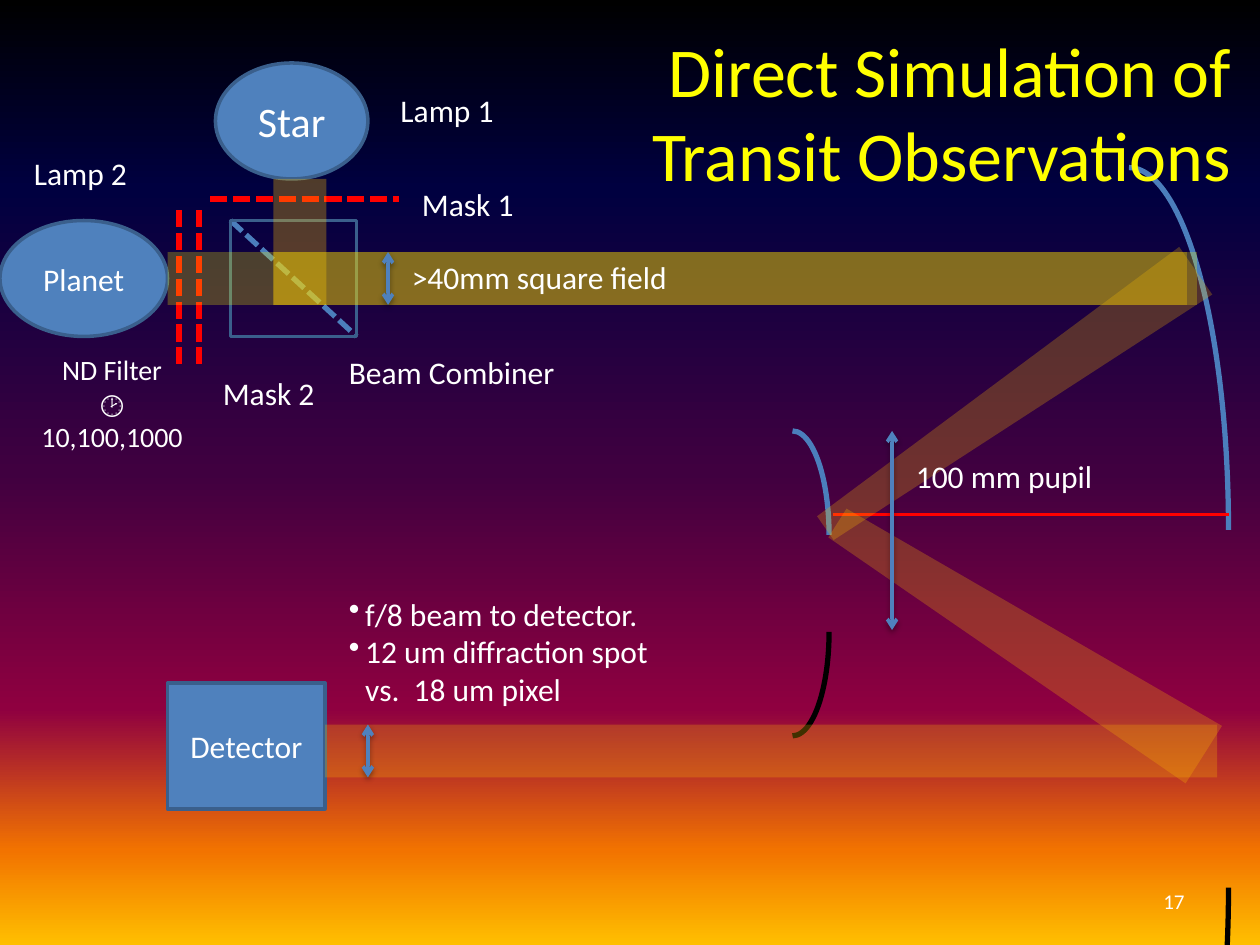
from lxml.etree import SubElement
from pptx import Presentation
from pptx.dml.color import RGBColor
from pptx.enum.dml import MSO_LINE_DASH_STYLE as Dash
from pptx.enum.shapes import MSO_CONNECTOR as Connector, MSO_SHAPE as Shape
from pptx.enum.text import MSO_ANCHOR as Anchor, MSO_AUTO_SIZE as AutoSize, PP_ALIGN as Align
from pptx.oxml.ns import qn
from pptx.util import Inches, Pt

FONT = "Calibri"
WHITE, BLACK, RED, YELLOW = "FFFFFF", "000000", "FF0000", "FFFF00"
BLUE, EDGE, MIRROR, GOLD = "4F81BD", "3A5F8C", "4B7EBC", "FFC000"
SKY = [(0, "000000"), (20, "000040"), (50, "400040"),
       (75, "8F0040"), (90, "F27300"), (100, "FFBF00")]
# Start and end of an arc, clockwise from the right, in degrees * 0.6
UPPER_QUARTER, LOWER_QUARTER = (162, 0), (0, 54)


def rgb(color):
    return RGBColor.from_string(color)


def inches(*lengths):
    return [Inches(length) for length in lengths]


def set_background(slide):
    fill = slide.background.fill
    fill.gradient()
    fill.gradient_angle = 270
    stops = slide.element.find(".//" + qn("a:gsLst"))
    for stop in list(stops):
        stops.remove(stop)
    for percent, color in SKY:
        stop = SubElement(stops, qn("a:gs"), pos=str(percent * 1000))
        SubElement(stop, qn("a:srgbClr"), val=color)


def style_text(frame, text, size, color=WHITE, align=Align.LEFT):
    frame.text = text
    for paragraph in frame.paragraphs:
        paragraph.alignment = align
        font = paragraph.font
        font.name, font.size, font.color.rgb = FONT, Pt(size), rgb(color)


def add_shape(slide, kind, box, fill=None, line=None, width=2):
    shape = slide.shapes.add_shape(kind, *inches(*box))
    shape.shadow.inherit = False
    if fill:
        shape.fill.solid()
        shape.fill.fore_color.rgb = rgb(fill)
    else:
        shape.fill.background()
    if line:
        shape.line.color.rgb = rgb(line)
        shape.line.width = Pt(width)
    else:
        shape.line.fill.background()
    return shape


def add_component(slide, kind, box, text, size=18):
    shape = add_shape(slide, kind, box, BLUE, EDGE)
    style_text(shape.text_frame, text, size, align=Align.CENTER)
    shape.text_frame.vertical_anchor = Anchor.MIDDLE


def add_mirror(slide, box, quarter, color):
    """Draw one quarter of an ellipse as a curved mirror."""
    arc = add_shape(slide, Shape.ARC, box, line=color, width=3)
    arc.adjustments[0], arc.adjustments[1] = quarter


def add_beam(slide, kind, box, color, opacity, rotation=0):
    beam = add_shape(slide, kind, box, color)
    beam.rotation = rotation
    fill_color = beam.element.spPr.find(qn("a:solidFill"))[0]
    SubElement(fill_color, qn("a:alpha"), val=str(opacity * 1000))


def add_line(slide, start, end, color, width, dash=None):
    line = slide.shapes.add_connector(Connector.STRAIGHT, *inches(*start, *end))
    line.line.color.rgb = rgb(color)
    line.line.width = Pt(width)
    if dash:
        line.line.dash_style = dash
    SubElement(line.element.spPr, qn("a:effectLst"))


def add_size_arrow(slide, x, top, bottom):
    """Draw a vertical double arrow that keeps the theme's shadow."""
    arrow = slide.shapes.add_connector(Connector.STRAIGHT, *inches(x, top, x, bottom))
    arrow.line.color.rgb = rgb(BLUE)
    arrow.line.width = Pt(2)
    outline = arrow.element.spPr.find(qn("a:ln"))
    for end in ("a:headEnd", "a:tailEnd"):
        SubElement(outline, qn(end), type="arrow")


def add_text(slide, box, text, size=18, align=Align.LEFT, wrap=True):
    text_box = slide.shapes.add_textbox(*inches(*box))
    frame = text_box.text_frame
    frame.word_wrap = wrap
    style_text(frame, text, size, align=align)
    return frame


def add_bullets(slide, box, items):
    for paragraph in add_text(slide, box, "\n".join(items)).paragraphs:
        properties = paragraph._p.get_or_add_pPr()
        properties.set("marL", str(Inches(0.13)))
        properties.set("indent", str(Inches(-0.13)))
        bullet = properties.makeelement(qn("a:buChar"), {"char": "•"})
        properties.insert_element_before(bullet, "a:tabLst", "a:defRPr", "a:extLst")


def place_title(slide, box, text):
    """Format the title and bring it in front of the shapes drawn so far."""
    title = slide.shapes.title
    title.left, title.top, title.width, title.height = inches(*box)
    frame = title.text_frame
    style_text(frame, text, 40, YELLOW, Align.RIGHT)
    frame.word_wrap = True
    frame.auto_size = AutoSize.NONE
    frame.vertical_anchor = Anchor.TOP
    title.element.getparent().append(title.element)


def add_optics(slide):
    add_component(slide, Shape.OVAL, (1.71, 0.5, 1.21, 0.92), "Star", 24)
    add_component(slide, Shape.OVAL, (0, 1.75, 1.33, 0.92), "Planet")
    add_mirror(slide, (8.17, 1.33, 1.58, 5.75), UPPER_QUARTER, MIRROR)
    add_mirror(slide, (8.17, 4.17, 1.58, 5.75), LOWER_QUARTER, BLACK)
    add_mirror(slide, (6, 3.42, 0.58, 1.65), UPPER_QUARTER, MIRROR)
    add_mirror(slide, (6, 4.19, 0.58, 1.65), LOWER_QUARTER, BLACK)
    add_line(slide, (9.75, 4.08), (6.61, 4.08), RED, 1.75)
    add_component(slide, Shape.RECTANGLE, (1.33, 5.42, 1.25, 1), "Detector")
    add_line(slide, (1.67, 1.58), (3.17, 1.58), RED, 3.25, Dash.SQUARE_DOT)
    for x in (1.42, 1.58):
        add_line(slide, (x, 1.67), (x, 2.92), RED, 3.25, Dash.SQUARE_DOT)
    add_line(slide, (1.83, 1.75), (2.83, 2.67), MIRROR, 3, Dash.SQUARE_DOT)
    add_shape(slide, Shape.RECTANGLE, (1.83, 1.75, 1, 0.92), line=EDGE)


def add_beams(slide):
    add_beam(slide, Shape.RECTANGLE, (2.17, 1.42, 0.42, 1), GOLD, 31)
    add_beam(slide, Shape.RECTANGLE, (2.17, 2, 7.25, 0.42), GOLD, 31)
    add_beam(slide, Shape.RECTANGLE, (1.33, 2, 8.17, 0.42), YELLOW, 25)
    add_beam(slide, Shape.TRAPEZOID, (7.79, 1.38, 0.46, 3.58), GOLD, 25, 235.2)
    add_beam(slide, Shape.TRAPEZOID, (7.83, 3.35, 0.54, 3.44), GOLD, 25, 302.3)
    add_beam(slide, Shape.RECTANGLE, (2.58, 5.75, 7.08, 0.42), GOLD, 25)


def add_labels(slide):
    labels = [
        ("Mask 1", 3.25, 1.42, 0.94),
        ("Mask 2", 1.67, 2.92, 0.94),
        ("Lamp 1", 3.08, 0.67, 0.95),
        ("Lamp 2", 0.17, 1.17, 0.95),
        ("Beam Combiner", 2.67, 2.75, 2.58),
        ("100 mm pupil", 7.17, 3.58, 1.62),
        (">40mm square field", 3.17, 2, 2.33),
    ]
    for text, left, top, width in labels:
        add_text(slide, (left, top, width, 0.4), text, wrap=False)
    add_text(slide, (0.15, 2.75, 1.48, 0.64), "ND Filter\n🕑10,100,1000", 16, Align.CENTER)
    number = add_text(slide, (7.17, 6.95, 2.33, 0.4), "17", 12, Align.RIGHT)
    number.vertical_anchor = Anchor.MIDDLE
    add_bullets(slide, (2.67, 4.67, 2.92, 1.01),
                ["f/8 beam to detector.", "12 um diffraction spot\vvs.  18 um pixel"])


def main():
    presentation = Presentation()
    presentation.slide_width, presentation.slide_height = inches(10, 7.5)
    slide = presentation.slides.add_slide(presentation.slide_layouts[5])
    set_background(slide)
    add_optics(slide)
    add_beams(slide)
    add_labels(slide)
    place_title(slide, (3.95, 0.17, 5.92, 1.45), "Direct Simulation of Transit Observations")
    for x, top, bottom in [(7.08, 3.42, 5), (3.08, 2, 2.42), (2.92, 5.75, 6.17)]:
        add_size_arrow(slide, x, top, bottom)
    presentation.save("out.pptx")


if __name__ == "__main__":
    main()
